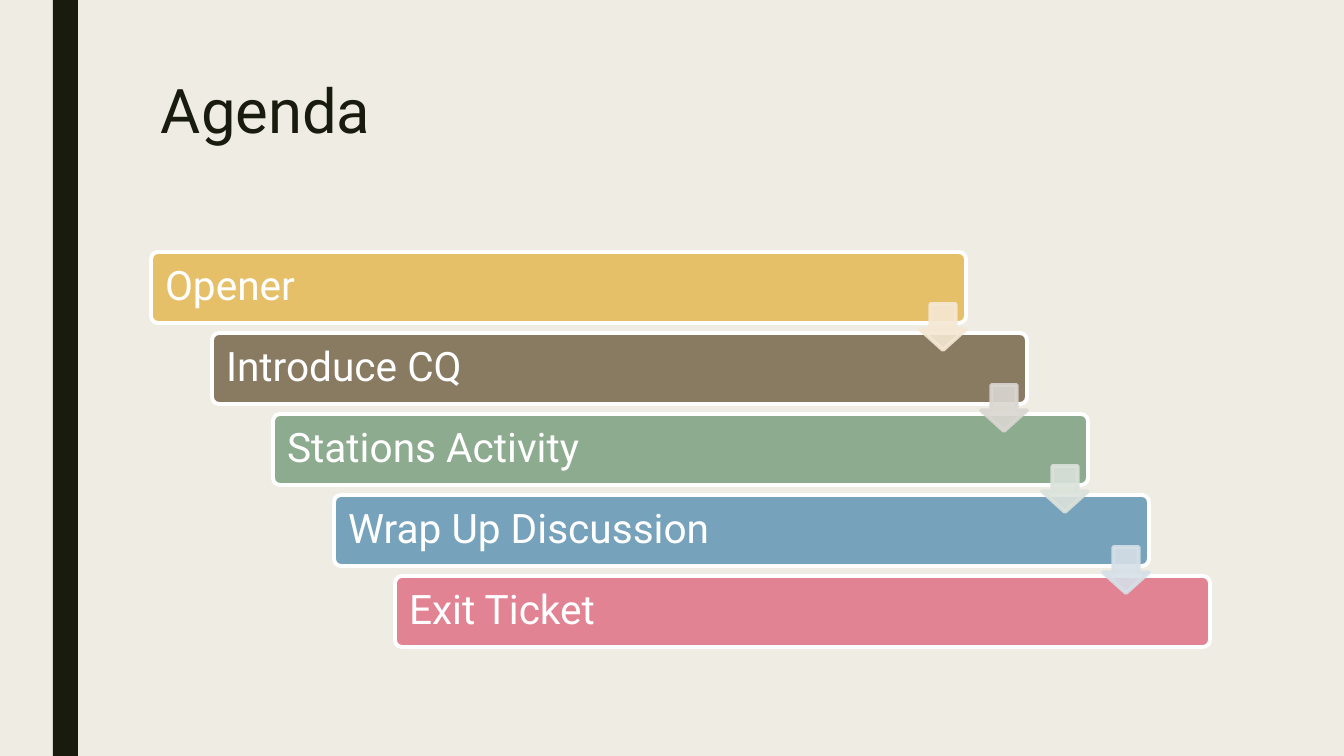
from lxml import etree
from pptx import Presentation
from pptx.dml.color import RGBColor
from pptx.enum.shapes import MSO_SHAPE
from pptx.enum.text import MSO_ANCHOR, PP_ALIGN
from pptx.oxml.ns import qn
from pptx.util import Pt

RECTANGLE = MSO_SHAPE.RECTANGLE
ROUNDED = MSO_SHAPE.ROUNDED_RECTANGLE
DOWN_ARROW = MSO_SHAPE.DOWN_ARROW
TOP, MIDDLE = MSO_ANCHOR.TOP, MSO_ANCHOR.MIDDLE
LEFT = PP_ALIGN.LEFT

CREAM = RGBColor(0xEF, 0xED, 0xE3)
INK = RGBColor(0x19, 0x1B, 0x0E)
WHITE = RGBColor(0xFF, 0xFF, 0xFF)
GOLD = RGBColor(0xE6, 0xC0, 0x69)
BROWN = RGBColor(0x89, 0x7B, 0x61)
GREEN = RGBColor(0x8D, 0xAB, 0x8E)
BLUE = RGBColor(0x77, 0xA2, 0xBB)
PINK = RGBColor(0xE2, 0x83, 0x94)
PALE_GOLD = RGBColor(0xF5, 0xE8, 0xD4)
PALE_BROWN = RGBColor(0xDA, 0xD7, 0xD2)
PALE_GREEN = RGBColor(0xDB, 0xE2, 0xDB)
PALE_BLUE = RGBColor(0xD6, 0xE0, 0xE7)

PAGE_WIDTH, PAGE_HEIGHT = 1344, 756
STEP_X, STEP_Y = 61, 81
AGENDA = [
    ("Opener", GOLD),
    ("Introduce CQ", BROWN),
    ("Stations Activity", GREEN),
    ("Wrap Up Discussion", BLUE),
    ("Exit Ticket", PINK),
]
ARROW_COLOURS = [PALE_GOLD, PALE_BROWN, PALE_GREEN, PALE_BLUE]


def px(length):
    return round(length * 914400 / 100.8)


class AgendaPage:
    font = "Roboto"
    outline = Pt(2.75)

    def __init__(self, deck):
        self.page = deck.slides.add_slide(deck.slide_layouts[6])
        self.page.background.fill.solid()
        self.page.background.fill.fore_color.rgb = CREAM

    def shape(self, kind, left, top, width, height, fill, line=None, adjustments=()):
        box = self.page.shapes.add_shape(kind, px(left), px(top), px(width), px(height))
        box.shadow.inherit = False
        box.fill.solid()
        box.fill.fore_color.rgb = fill
        if line is None:
            box.line.fill.background()
        else:
            box.line.color.rgb = line
            box.line.width = self.outline
        for index, value in enumerate(adjustments):
            box.adjustments[index] = value
        return box

    def add_text(self, box, text, size, colour, anchor, spacing):
        frame = box.text_frame
        frame.word_wrap = True
        frame.vertical_anchor = anchor
        para = frame.paragraphs[0]
        para.alignment = LEFT
        para.line_spacing = spacing
        span = para.add_run()
        span.text = text
        span.font.name = self.font
        span.font.size = Pt(size)
        span.font.color.rgb = colour

    def title(self, text, left, top, width, height):
        box = self.page.shapes.add_textbox(px(left), px(top), px(width), px(height))
        self.add_text(box, text, 44, INK, TOP, 0.89)

    def bar(self, text, left, top, fill):
        box = self.shape(ROUNDED, left, top, 815, 71, fill, WHITE, [0.1])
        frame = box.text_frame
        frame.margin_left = frame.margin_right = px(12)
        frame.margin_top = frame.margin_bottom = px(12)
        self.add_text(box, text, 29, WHITE, MIDDLE, 0.9)

    def arrow(self, left, top, colour):
        box = self.shape(DOWN_ARROW, left, top, 46, 46, colour, colour, [0.55, 0.45])
        # Fill and outline are both 90% opaque
        for tint in list(box.element.iter(qn("a:srgbClr"))):
            etree.SubElement(tint, qn("a:alpha"), val="90000")


def main():
    deck = Presentation()
    deck.slide_width, deck.slide_height = px(PAGE_WIDTH), px(PAGE_HEIGHT)
    page = AgendaPage(deck)

    # Side stripe and title
    page.shape(RECTANGLE, 53, 0, 25, PAGE_HEIGHT, INK)
    page.title("Agenda", 151, 76, 1058, 163)

    # Staircase of agenda items
    for step, (text, fill) in enumerate(AGENDA):
        page.bar(text, 151 + step * STEP_X, 252 + step * STEP_Y, fill)

    # Arrows from each item to the next
    for step, colour in enumerate(ARROW_COLOURS):
        page.arrow(920 + step * STEP_X, 304 + step * STEP_Y, colour)

    deck.save("out.pptx")


if __name__ == "__main__":
    main()
